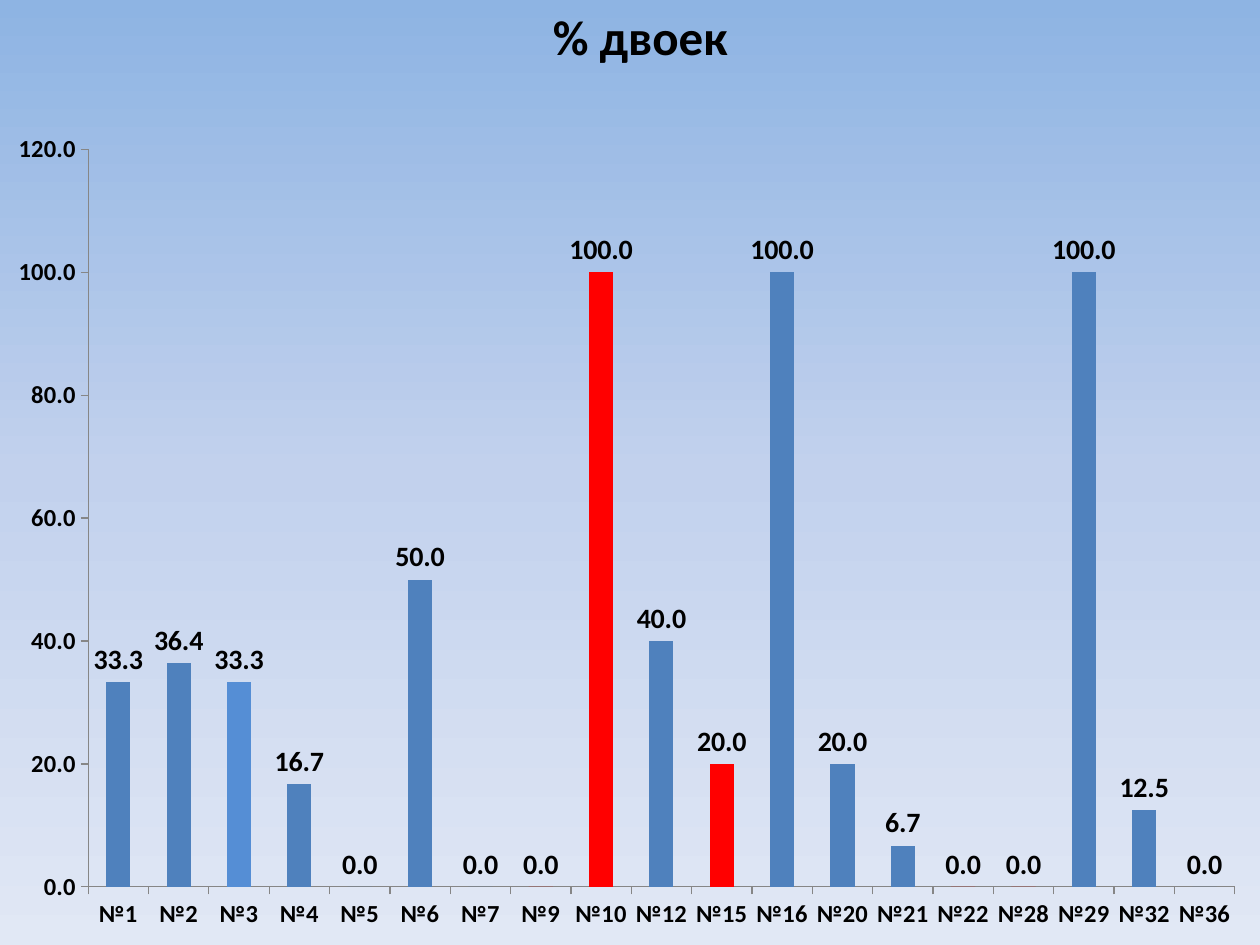
import copy

import lxml.etree
import pptx
import pptx.chart.data
import pptx.dml.color
import pptx.enum.chart
import pptx.enum.text
import pptx.oxml.ns
import pptx.util

WIDE, HIGH = pptx.util.Inches(10), pptx.util.Inches(7.5)
FONT = "Calibri"
COLORS = {"text": "000000", "bar": "4F81BD", "light": "558ED5",
          "red": "FF0000", "axis": "868686"}
STOPS = [(0, "8EB4E3"), (0.5, "C2D1ED"), (1, "E1E8F5")]
MARKS = {2: "light", 7: "red", 8: "red", 10: "red", 14: "red", 15: "red"}
ROWS = [("№1", 33.3), ("№2", 36.4), ("№3", 33.3), ("№4", 16.7), ("№5", 0),
        ("№6", 50), ("№7", 0), ("№9", 0), ("№10", 100), ("№12", 40),
        ("№15", 20), ("№16", 100), ("№20", 20), ("№21", 6.7), ("№22", 0),
        ("№28", 0), ("№29", 100), ("№32", 12.5), ("№36", 0)]
PLOT = {"x": 0.07, "y": 0.04, "w": 0.91, "h": 0.89}


def color(name):
    return pptx.dml.color.RGBColor.from_string(COLORS.get(name, name))


def style(font, size):
    font.name = FONT
    font.size = pptx.util.Pt(size)
    font.bold = True
    font.color.rgb = color("text")


def paint(fill, name):
    fill.solid()
    fill.fore_color.rgb = color(name)


def shade(slide):
    fill = slide.background.fill
    fill.gradient()
    fill.gradient_angle = 270
    # The default gradient has two stops; add the third
    tag = pptx.oxml.ns.qn("a:gsLst")
    stops = next(slide.element.iter(tag))
    stops.append(copy.deepcopy(stops[0]))
    for stop, (place, tone) in zip(fill.gradient_stops, STOPS):
        stop.position = place
        stop.color.rgb = color(tone)


def title(slide, text):
    box = slide.shapes.add_textbox(int(WIDE * 0.429), 0,
                                   int(WIDE * 0.16), int(HIGH * 0.076))
    frame = box.text_frame
    frame.text = text
    frame.word_wrap = False
    frame.auto_size = pptx.enum.text.MSO_AUTO_SIZE.SHAPE_TO_FIT_TEXT
    style(frame.paragraphs[0].runs[0].font, 28)


def axis(line):
    line.has_major_gridlines = False
    line.major_tick_mark = pptx.enum.chart.XL_TICK_MARK.OUTSIDE
    line.format.line.color.rgb = color("axis")
    line.format.line.width = pptx.util.Pt(0.75)
    style(line.tick_labels.font, 14)


def place(chart):
    # Fix the inner plot area as shares of the chart
    name = pptx.oxml.ns.qn
    area = next(chart.element.iter(name("c:plotArea")))
    for old in area.findall(name("c:layout")):
        area.remove(old)
    layout = lxml.etree.Element(name("c:layout"))
    area.insert(0, layout)
    manual = lxml.etree.SubElement(layout, name("c:manualLayout"))
    rules = {"layoutTarget": "inner", "xMode": "edge", "yMode": "edge", **PLOT}
    for key, value in rules.items():
        lxml.etree.SubElement(manual, name("c:" + key)).set("val", str(value))


def columns(slide):
    data = pptx.chart.data.CategoryChartData(number_format="0.0")
    names, values = zip(*ROWS)
    data.categories = names
    data.add_series("Series 1", values)
    top = int(HIGH * 0.123)
    kind = pptx.enum.chart.XL_CHART_TYPE.COLUMN_CLUSTERED
    chart = slide.shapes.add_chart(kind, 0, top, WIDE, HIGH - top, data).chart
    chart.has_legend = False
    chart.has_title = False
    chart.font.name = FONT
    chart.font.size = pptx.util.Pt(10)
    place(chart)

    # Axes
    axis(chart.category_axis)
    scale = chart.value_axis
    axis(scale)
    scale.minimum_scale, scale.maximum_scale, scale.major_unit = 0, 120, 20
    scale.tick_labels.number_format = "0.0"
    scale.tick_labels.number_format_is_linked = False

    # Bars
    plot = chart.plots[0]
    plot.gap_width = 150
    plot.vary_by_categories = False
    bars = plot.series[0]
    bars.invert_if_negative = False
    paint(bars.format.fill, "bar")
    for index, tone in MARKS.items():
        paint(bars.points[index].format.fill, tone)

    # Value labels
    labels = bars.data_labels
    labels.show_value = True
    labels.number_format = "0.0"
    labels.number_format_is_linked = False
    labels.position = pptx.enum.chart.XL_LABEL_POSITION.OUTSIDE_END
    style(labels.font, 16)


def main():
    deck = pptx.Presentation()
    deck.slide_width, deck.slide_height = WIDE, HIGH
    slide = deck.slides.add_slide(deck.slide_layouts[6])
    shade(slide)
    title(slide, "% двоек")
    columns(slide)
    deck.save("out.pptx")


if __name__ == "__main__":
    main()
